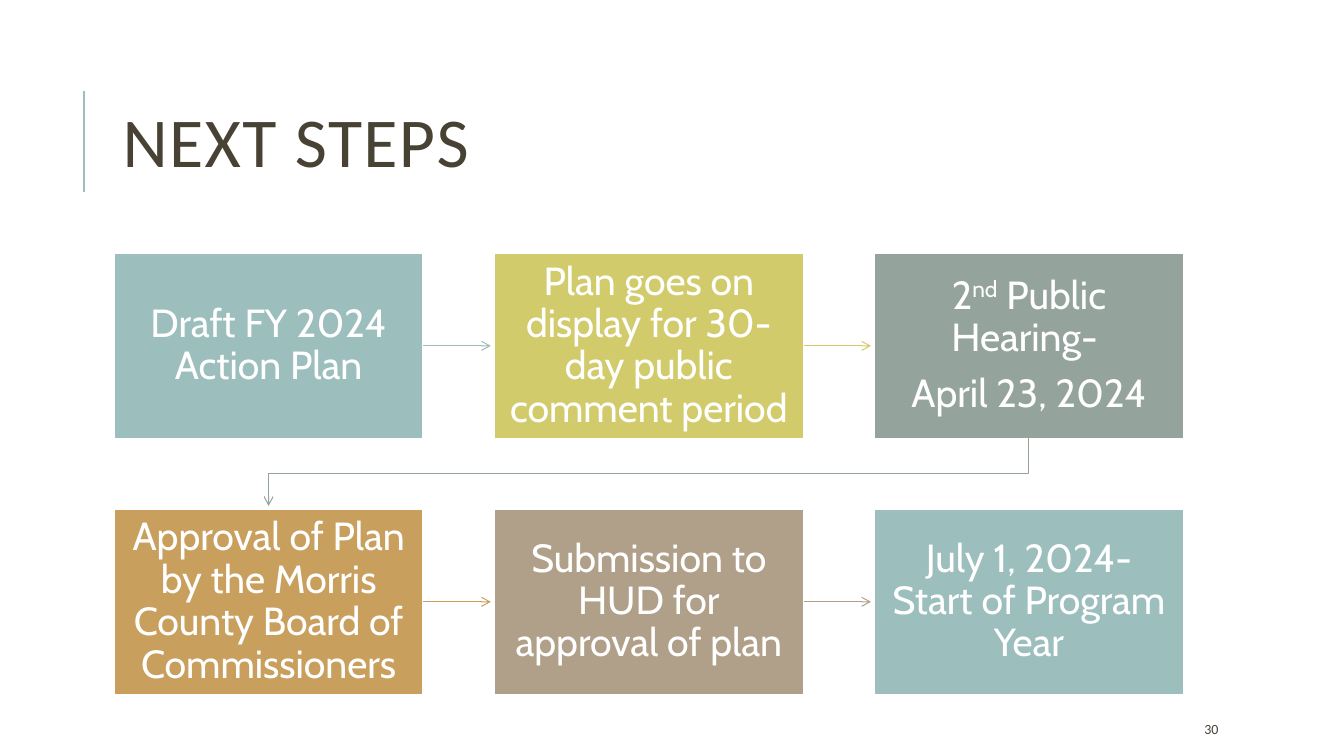
from lxml import etree
from pptx import Presentation
from pptx import util as u
from pptx.dml.color import RGBColor
from pptx.enum import shapes, text
from pptx.oxml import ns

TEAL = RGBColor(0x9C, 0xBE, 0xBD)
LIME = RGBColor(0xD2, 0xCB, 0x6C)
SAGE = RGBColor(0x95, 0xA3, 0x9D)
OCHRE = RGBColor(0xC8, 0x9F, 0x5D)
TAUPE = RGBColor(0xB1, 0xA0, 0x89)
DARK = RGBColor(0x47, 0x42, 0x33)
WHITE = RGBColor(0xFF, 0xFF, 0xFF)

TITLE = "NEXT STEPS"
SLIDE_NUMBER = "30"
# Each step: colour, paragraphs; a paragraph is a list of (text, is superscript)
STEPS = [
    (TEAL, [[("Draft FY 2024 Action Plan", False)]]),
    (LIME, [[("Plan goes on display for 30-day public comment period", False)]]),
    (SAGE, [[("2", False), ("nd", True), (" Public Hearing- ", False)],
            [("April 23, 2024", False)]]),
    (OCHRE, [[("Approval of Plan by the Morris County Board of Commissioners", False)]]),
    (TAUPE, [[("Submission to HUD for approval of plan", False)]]),
    (TEAL, [[("July 1, 2024- Start of Program Year", False)]]),
]

COLUMNS = 3
LEFT, TOP = u.Cm(2.87), u.Cm(6.38)
BOX_WIDTH, BOX_HEIGHT = u.Cm(7.8), u.Cm(4.67)
COLUMN_PITCH, ROW_PITCH = u.Cm(9.58), u.Cm(6.45)
ARROW_GAP = u.Cm(0.08)


def add_arrowhead(shape):
    line = shape.line._get_or_add_ln()
    etree.SubElement(line, ns.qn("a:tailEnd"), type="arrow")


def remove_shadow(connector):
    etree.SubElement(connector._element.spPr, ns.qn("a:effectLst"))


def add_line(slide, start, end, color, width):
    line = slide.shapes.add_connector(shapes.MSO_CONNECTOR.STRAIGHT, *start, *end)
    line.line.color.rgb = color
    line.line.width = u.Pt(width)
    remove_shadow(line)
    return line


def add_label(slide, label, position, size):
    box = slide.shapes.add_textbox(*position)
    frame = box.text_frame
    frame.word_wrap = True
    frame.vertical_anchor = text.MSO_ANCHOR.MIDDLE
    frame.text = label
    font = frame.paragraphs[0].runs[0].font
    font.name, font.size, font.color.rgb = "Calibri", u.Pt(size), DARK
    return frame.paragraphs[0]


def add_step(slide, index, color, paragraphs):
    row, column = divmod(index, COLUMNS)
    box = slide.shapes.add_shape(
        shapes.MSO_SHAPE.RECTANGLE, LEFT + column * COLUMN_PITCH,
        TOP + row * ROW_PITCH, BOX_WIDTH, BOX_HEIGHT)
    box.shadow.inherit = False
    box.fill.solid()
    box.fill.fore_color.rgb = color
    box.line.color.rgb = WHITE
    box.line.width = u.Pt(1.25)
    frame = box.text_frame
    frame.word_wrap = True
    frame.vertical_anchor = text.MSO_ANCHOR.MIDDLE
    frame.margin_left = frame.margin_right = u.Cm(0.38)
    frame.margin_top = frame.margin_bottom = u.Cm(0.4)
    for number, parts in enumerate(paragraphs):
        paragraph = frame.add_paragraph() if number else frame.paragraphs[0]
        paragraph.alignment = text.PP_ALIGN.CENTER
        paragraph.line_spacing = 0.9
        paragraph.space_after = u.Pt(10)
        for words, superscript in parts:
            run = paragraph.add_run()
            run.text = words
            run.font.name, run.font.size = "Cabin", u.Pt(28)
            run.font.color.rgb = WHITE
            if superscript:
                run.font._element.set("baseline", "30000")
    return box


def join_in_row(slide, box, following, color):
    middle = box.top + box.height // 2
    arrow = add_line(slide, (box.left + box.width, middle),
                     (following.left - ARROW_GAP, middle), color, 0.75)
    arrow.begin_connect(box, 3)
    add_arrowhead(arrow)


def join_to_next_row(slide, box, following, color):
    start_x = box.left + box.width // 2
    end_x = following.left + following.width // 2
    start_y = box.top + box.height
    turn_y = (start_y + following.top) // 2
    builder = slide.shapes.build_freeform(start_x, start_y)
    builder.add_line_segments(
        [(start_x, turn_y), (end_x, turn_y), (end_x, following.top - ARROW_GAP)],
        close=False)
    arrow = builder.convert_to_shape()
    arrow.shadow.inherit = False
    arrow.fill.background()
    arrow.line.color.rgb = color
    arrow.line.width = u.Pt(0.75)
    add_arrowhead(arrow)


def main():
    presentation = Presentation()
    presentation.slide_width, presentation.slide_height = u.Cm(33.87), u.Cm(19.05)
    slide = presentation.slides.add_slide(presentation.slide_layouts[6])

    add_line(slide, (u.Cm(2.12), u.Cm(4.83)), (u.Cm(2.12), u.Cm(2.29)), TEAL, 1.5)
    title = add_label(slide, TITLE, (u.Cm(2.84), u.Cm(1.63), u.Cm(27), u.Cm(4.17)), 50)
    title.line_spacing = 0.8
    title.runs[0].font._element.set("spc", "100")
    add_label(slide, SLIDE_NUMBER, (u.Cm(30.1), u.Cm(17.98), u.Cm(2.69), u.Cm(0.76)), 10)

    boxes = [add_step(slide, index, *step) for index, step in enumerate(STEPS)]
    for index, (box, following) in enumerate(zip(boxes, boxes[1:]), start=1):
        join = join_in_row if index % COLUMNS else join_to_next_row
        join(slide, box, following, STEPS[index - 1][0])

    presentation.save("out.pptx")


if __name__ == "__main__":
    main()
